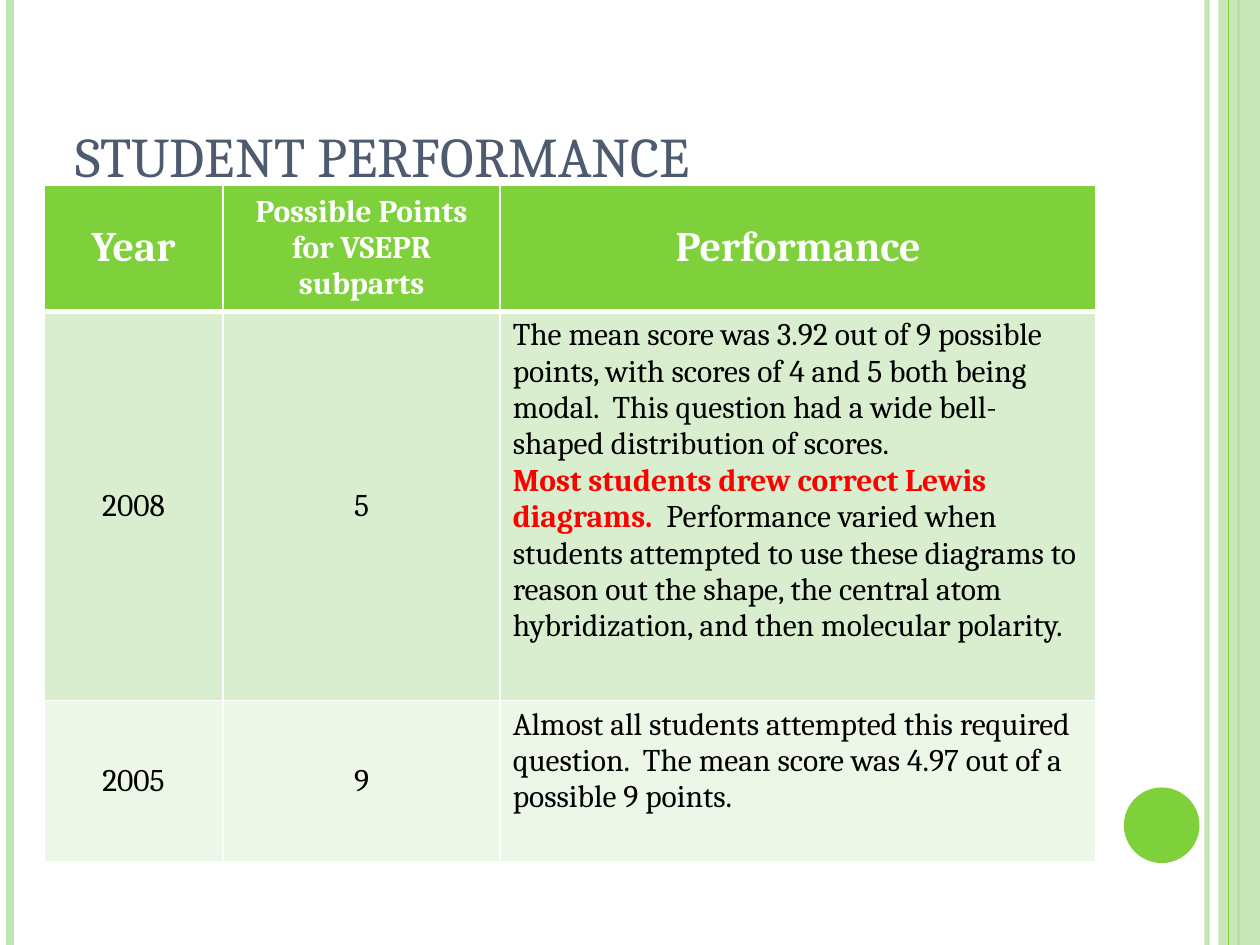
import pptx
import pptx.util
import pptx.dml.color
import pptx.enum.shapes
import pptx.enum.text
import pptx.oxml
import pptx.oxml.ns
import lxml.etree

ANCHOR = pptx.enum.text.MSO_ANCHOR
ALIGN = pptx.enum.text.PP_ALIGN
SHAPE = pptx.enum.shapes.MSO_SHAPE
GREEN, PALE_GREEN, SLATE = "7FD13B", "C0E5AF", "4E5B6F"
WHITE, BLACK, RED = "FFFFFF", "000000", "FF0000"
HEADER = {"size": 24, "bold": True, "color": WHITE}
SMALL_HEADER = {**HEADER, "size": 18}
BODY = {"size": 18, "bold": False, "color": BLACK}
EMPHASIS = {**BODY, "bold": True, "color": RED}


def rgb(value):
    return pptx.dml.color.RGBColor.from_string(value)


def qn(name):
    return pptx.oxml.ns.qn(name)


class GridSlide:
    COLUMNS, ROWS = 100, 75
    FONT = "Cambria"

    def __init__(self, deck):
        self.unit_x = deck.slide_width / self.COLUMNS
        self.unit_y = deck.slide_height / self.ROWS
        self.slide = deck.slides.add_slide(deck.slide_layouts[5])

    def x(self, columns):
        return round(columns * self.unit_x)

    def y(self, rows):
        return round(rows * self.unit_y)

    def box(self, left, top, width, height):
        return self.x(left), self.y(top), self.x(width), self.y(height)

    def set_alpha(self, element, percent):
        color = next(element.iter(qn("a:srgbClr")))
        lxml.etree.SubElement(color, qn("a:alpha")).set("val", str(percent * 1000))

    def styled_run(self, paragraph, text, style):
        run = paragraph.add_run()
        run.text = text
        values = {"name": self.FONT, "size": pptx.util.Pt(style["size"]), "bold": style["bold"]}
        for key, value in values.items():
            setattr(run.font, key, value)
        run.font.color.rgb = rgb(style["color"])

    def title(self, text, bounds, style):
        title = self.slide.shapes.title
        for key, value in zip(("left", "top", "width", "height"), self.box(*bounds)):
            setattr(title, key, value)
        frame_format = {
            "vertical_anchor": ANCHOR.BOTTOM,
            "word_wrap": True,
            "auto_size": pptx.enum.text.MSO_AUTO_SIZE.NONE,
        }
        for key, value in frame_format.items():
            setattr(title.text_frame, key, value)
        paragraph = title.text_frame.paragraphs[0]
        paragraph.alignment = ALIGN.LEFT
        self.styled_run(paragraph, text, style)

    def rule(self, column, color, width, alpha=None):
        rule = self.slide.shapes.add_connector(
            pptx.enum.shapes.MSO_CONNECTOR.STRAIGHT,
            self.x(column), 0, self.x(column), self.y(self.ROWS))
        rule.line.color.rgb = rgb(color)
        rule.line.width = pptx.util.Pt(width)
        properties = rule._element.spPr
        if alpha:
            self.set_alpha(properties, alpha)
        lxml.etree.SubElement(properties, qn("a:effectLst"))

    def shape(self, kind, bounds, color, alpha=None):
        shape = self.slide.shapes.add_shape(kind, *self.box(*bounds))
        shape.shadow.inherit = False
        shape.fill.solid()
        shape.fill.fore_color.rgb = rgb(color)
        shape.line.fill.background()
        if alpha:
            self.set_alpha(shape._element.spPr, alpha)

    def borders(self, cell, widths):
        properties = cell._tc.get_or_add_tcPr()
        for side, width in widths.items():
            line = lxml.etree.SubElement(properties, qn(f"a:ln{side}"))
            line.set("w", str(int(pptx.util.Pt(width))))
            fill = lxml.etree.SubElement(line, qn("a:solidFill"))
            lxml.etree.SubElement(fill, qn("a:srgbClr")).set("val", WHITE)

    def cell(self, cell, paragraphs, fill, widths, centred):
        self.borders(cell, widths)
        cell.fill.solid()
        cell.fill.fore_color.rgb = rgb(fill)
        cell.vertical_anchor = ANCHOR.MIDDLE if centred else ANCHOR.TOP
        for index, runs in enumerate(paragraphs):
            frame = cell.text_frame
            paragraph = frame.add_paragraph() if index else frame.paragraphs[0]
            paragraph.alignment = ALIGN.CENTER if centred else ALIGN.LEFT
            for text, style in runs:
                self.styled_run(paragraph, text, style)

    def table(self, left, top, columns, rows, fills, content):
        table = self.slide.shapes.add_table(
            len(rows), len(columns),
            *self.box(left, top, sum(columns), sum(rows))).table
        for column, width in zip(table.columns, columns):
            column.width = self.x(width)
        for row, height in zip(table.rows, rows):
            row.height = self.y(height)
        for r, (fill, line) in enumerate(zip(fills, content)):
            widths = {"L": 1, "R": 1, "T": 3 if r == 1 else 1, "B": 3 if r == 0 else 1}
            for c, paragraphs in enumerate(line):
                centred = r == 0 or c < len(columns) - 1
                self.cell(table.cell(r, c), paragraphs, fill, widths, centred)


def main():
    deck = pptx.Presentation()
    deck.slide_width = pptx.util.Inches(10)
    deck.slide_height = pptx.util.Inches(7.5)
    page = GridSlide(deck)

    page.rule(95.8, PALE_GREEN, 3, 93)
    page.rule(0.8, PALE_GREEN, 4.5)
    page.rule(98.3, GREEN, 1.5)
    page.shape(SHAPE.RECTANGLE, (96.7, 0, 3.3, 75), PALE_GREEN, 87)
    page.rule(97.5, GREEN, 0.75)
    page.shape(SHAPE.OVAL, (89.2, 62.5, 6, 6), GREEN)

    page.title("STUDENT PERFORMANCE", (5, 3, 81.7, 12.5),
               {"size": 32, "bold": False, "color": SLATE})

    performance_2008 = [
        [("The mean score was 3.92 out of 9 possible points, with scores of 4 and 5 "
          "both being modal.  This question had a wide bell-shaped distribution of scores.", BODY)],
        [("Most students drew correct Lewis diagrams.  ", EMPHASIS),
         ("Performance varied when students attempted to use these diagrams to reason out "
          "the shape, the central atom hybridization, and then molecular polarity.", BODY)],
    ]
    performance_2005 = [
        [("Almost all students attempted this required question.  "
          "The mean score was 4.97 out of a possible 9 points.", BODY)],
    ]
    results = [
        [[[("Year", HEADER)]],
         [[("Possible Points for VSEPR subparts", SMALL_HEADER)]],
         [[("Performance", HEADER)]]],
        [[[("2008", BODY)]], [[("5", BODY)]], performance_2008],
        [[[("2005", BODY)]], [[("9", BODY)]], performance_2005],
    ]
    page.table(3.5, 14.7, (14.2, 22, 47.3), (10, 30.9, 12.8),
               (GREEN, "D8EECE", "ECF7E8"), results)

    deck.save("out.pptx")


if __name__ == "__main__":
    main()
